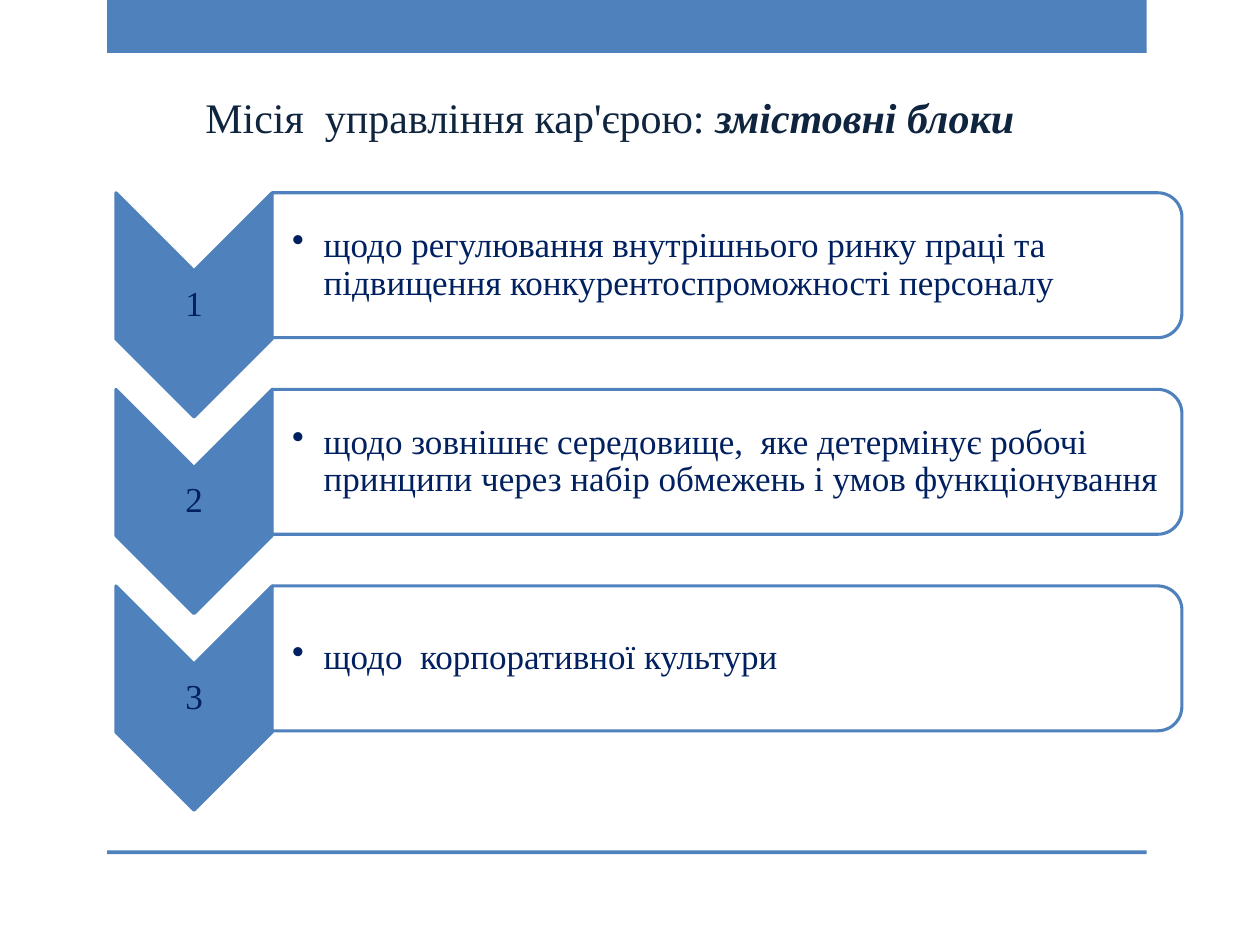
import dataclasses

import lxml.etree
import pptx
import pptx.dml.color
import pptx.enum.shapes
import pptx.enum.text
import pptx.oxml.ns
import pptx.util

Inches = pptx.util.Inches
Pt = pptx.util.Pt
RGB = pptx.dml.color.RGBColor
SHAPE = pptx.enum.shapes.MSO_SHAPE
ALIGN = pptx.enum.text.PP_ALIGN
ANCHOR = pptx.enum.text.MSO_ANCHOR
qn = pptx.oxml.ns.qn


@dataclasses.dataclass(frozen=True)
class Theme:
    accent: RGB = RGB(0x4F, 0x81, 0xBD)
    panel: RGB = RGB(0xFF, 0xFF, 0xFF)
    title: RGB = RGB(0x0F, 0x24, 0x3E)
    body: RGB = RGB(0x00, 0x20, 0x60)
    font: str = "Times New Roman"
    title_size: int = 24
    body_size: int = 20
    outline: float = 1.75


THEME = Theme()
TITLE = [("Місія  управління кар'єрою: ", False), ("змістовні блоки", True)]
BLOCKS = [
    "щодо регулювання внутрішнього ринку праці та підвищення конкурентоспроможності персоналу",
    "щодо зовнішнє середовище,  яке детермінує робочі принципи через набір обмежень і умов функціонування",
    "щодо  корпоративної культури",
]


def add_filled(slide, preset, left, top, width, height, fill, outlined=False):
    shape = slide.shapes.add_shape(
        preset, Inches(left), Inches(top), Inches(width), Inches(height))
    shape.shadow.inherit = False
    shape.fill.solid()
    shape.fill.fore_color.rgb = fill
    if outlined:
        shape.line.color.rgb = THEME.accent
        shape.line.width = Pt(THEME.outline)
    else:
        shape.line.fill.background()
    return shape


def add_turned(slide, preset, left, top, width, height, fill):
    """Place an outlined shape turned by 90° so that it covers the given box."""
    shift = (width - height) / 2
    shape = add_filled(slide, preset, left + shift, top - shift, height, width,
                       fill, outlined=True)
    shape.rotation = 90
    return shape


def add_text_box(slide, left, top, width, height, margin=None, indent=None):
    box = slide.shapes.add_textbox(
        Inches(left), Inches(top), Inches(width), Inches(height))
    frame = box.text_frame
    frame.word_wrap = True
    if margin is not None:
        frame.vertical_anchor = ANCHOR.MIDDLE
        frame.margin_top = frame.margin_right = frame.margin_bottom = Inches(margin)
        frame.margin_left = Inches(margin if indent is None else indent)
    return frame.paragraphs[0]


def add_run(paragraph, text, size, color, emphasis=False):
    run = paragraph.add_run()
    run.text = text
    run.font.name = THEME.font
    run.font.size = Pt(size)
    run.font.color.rgb = color
    if emphasis:
        run.font.bold = run.font.italic = True


def add_bullet(paragraph, hanging):
    properties = paragraph._p.get_or_add_pPr()
    properties.set("marL", str(Inches(hanging)))
    properties.set("indent", str(-Inches(hanging)))
    lxml.etree.SubElement(properties, qn("a:buChar"), char="•")


def add_frame_bars(slide, left, width):
    for top, height in ((0, 0.42), (6.75, 0.03)):
        add_filled(slide, SHAPE.RECTANGLE, left, top, width, height, THEME.accent)


def add_title(slide, left, top, width, height):
    paragraph = add_text_box(slide, left, top, width, height)
    paragraph.alignment = ALIGN.CENTER
    for text, emphasis in TITLE:
        add_run(paragraph, text, THEME.title_size, THEME.title, emphasis)


def add_block(slide, left, top, width, number, text):
    """Add a numbered chevron with its rounded text panel to the right."""
    marker_width, marker_height, panel_height = 1.24, 1.78, 1.15
    panel_left, panel_width = left + marker_width, width - marker_width

    add_turned(slide, SHAPE.CHEVRON, left, top, marker_width, marker_height, THEME.accent)
    label = add_text_box(slide, left, top + marker_width / 2, marker_width,
                         marker_height - marker_width, margin=0.01)
    label.alignment = ALIGN.CENTER
    label.line_spacing = 0.9
    add_run(label, str(number), THEME.body_size, THEME.body)

    panel = add_turned(slide, SHAPE.ROUND_2_SAME_RECTANGLE, panel_left, top,
                       panel_width, panel_height, THEME.panel)
    color = panel.fill._xPr.find(qn("a:solidFill"))[0]
    lxml.etree.SubElement(color, qn("a:alpha"), val="90000")

    inset = 0.06
    body = add_text_box(slide, panel_left, top + inset, panel_width - inset,
                        panel_height - 2 * inset, margin=0.01, indent=0.16)
    body.line_spacing = 0.9
    add_bullet(body, hanging=0.25)
    add_run(body, text, THEME.body_size, THEME.body)


def add_blocks(slide, left, top, width, pitch):
    for index, text in enumerate(BLOCKS):
        add_block(slide, left, top + index * pitch, width, index + 1, text)


def main():
    deck = pptx.Presentation()
    deck.slide_width, deck.slide_height = Inches(10), Inches(7.5)
    slide = deck.slides.add_slide(deck.slide_layouts[6])
    add_frame_bars(slide, 0.85, 8.25)
    add_title(slide, 0.69, 0.68, 8.3, 0.5)
    add_blocks(slide, 0.92, 1.53, 8.46, pitch=1.56)
    deck.save("out.pptx")


if __name__ == "__main__":
    main()
